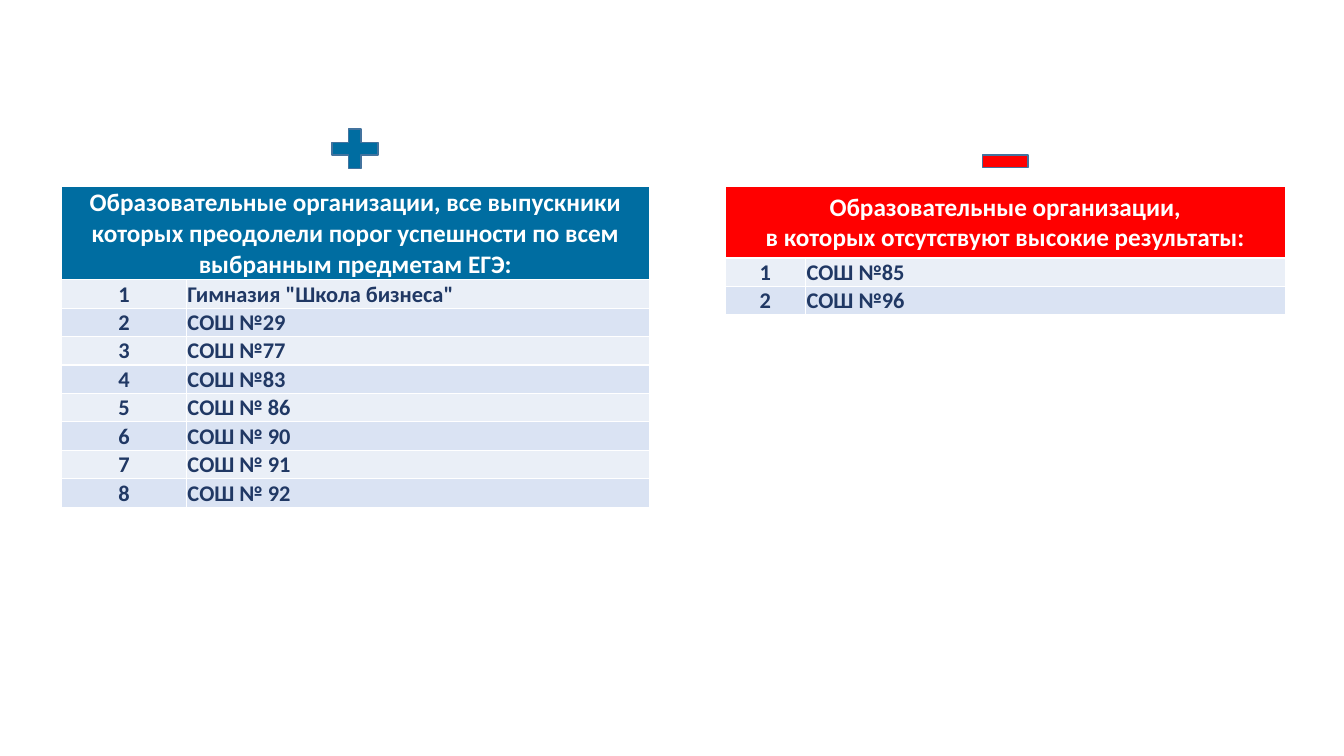
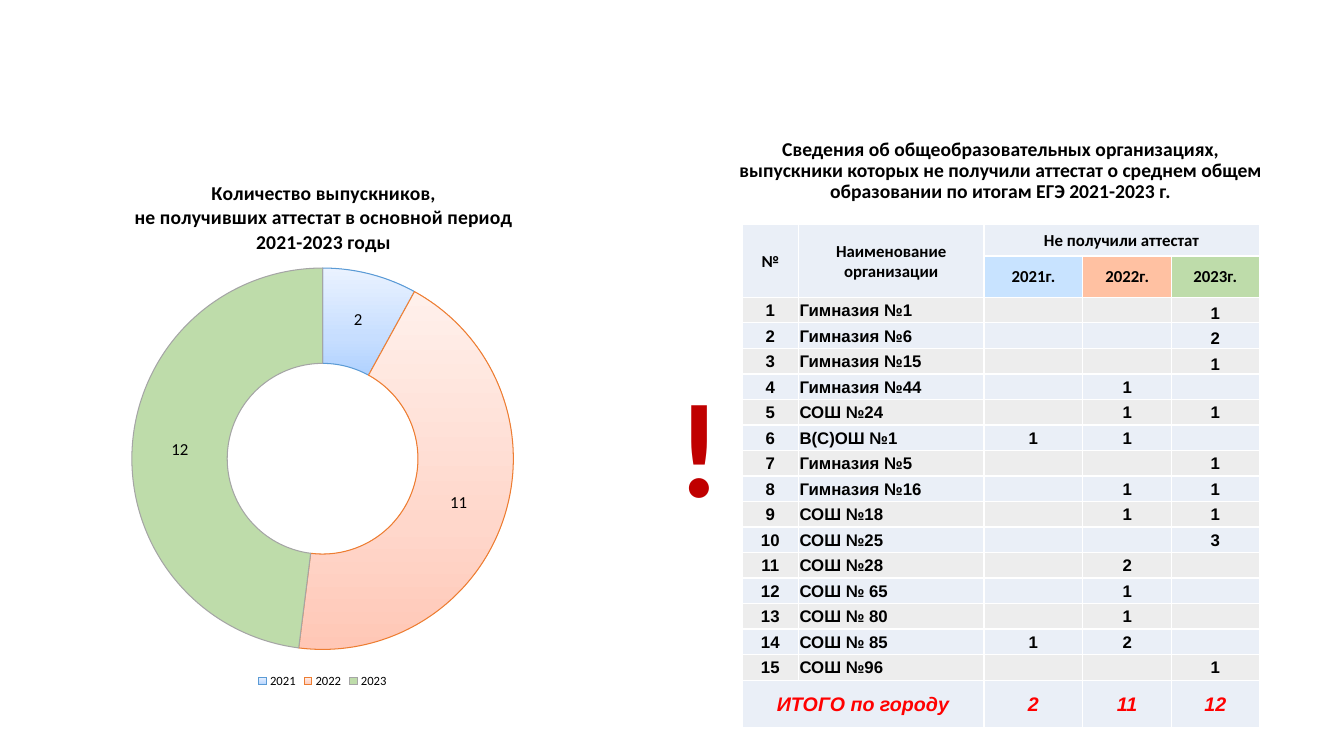
import pptx
import pptx.chart.data
import pptx.dml.color
import pptx.enum.chart
import pptx.enum.shapes
import pptx.enum.text
import pptx.oxml
import pptx.oxml.ns
import pptx.util
from lxml import etree

Inches = pptx.util.Inches
Pt = pptx.util.Pt
RGBColor = pptx.dml.color.RGBColor
qn = pptx.oxml.ns.qn
CENTER = pptx.enum.text.PP_ALIGN.CENTER
LEFT = pptx.enum.text.PP_ALIGN.LEFT
BOTTOM = pptx.enum.text.MSO_ANCHOR.BOTTOM

WHITE = RGBColor(0xFF, 0xFF, 0xFF)
BLACK = RGBColor(0, 0, 0)
RED = RGBColor(0xFF, 0, 0)
DARK_RED = RGBColor(0xC0, 0, 0)
BLUE = RGBColor(0, 0x6D, 0xA1)
NAVY = RGBColor(0x20, 0x38, 0x64)
OUTLINE = RGBColor(0x43, 0x73, 0x9E)
PALE_BLUE = RGBColor(0xEA, 0xEF, 0xF7)
LIGHT_BLUE = RGBColor(0xDA, 0xE3, 0xF3)
PALE_GREY = RGBColor(0xED, 0xED, 0xED)
YEAR_2021 = RGBColor(0xC8, 0xE3, 0xFF)
YEAR_2022 = RGBColor(0xFF, 0xC1, 0xA2)
YEAR_2023 = RGBColor(0xBE, 0xDC, 0xAA)


def write(frame, text, size=12, color=BLACK, font="Calibri", align=CENTER,
          bold=True, italic=False, line_spacing=None):
    """Fill a text frame, one paragraph for each line of the text."""
    for index, line in enumerate(text.split("\n")):
        paragraph = frame.add_paragraph() if index else frame.paragraphs[0]
        paragraph.alignment = align
        if line_spacing:
            paragraph.line_spacing = line_spacing
        if not line:
            etree.SubElement(paragraph._p, qn("a:endParaRPr"), sz=str(size * 100))
            continue
        run = paragraph.add_run()
        run.text = line
        run.font.size = Pt(size)
        run.font.name = font
        run.font.bold = bold
        run.font.italic = italic
        run.font.color.rgb = color


def add_table(slide, left, top, widths, heights, row_colors):
    """Add a table with white cell borders, narrow margins and one fill a row."""
    table = slide.shapes.add_table(
        len(heights), len(widths), Inches(left), Inches(top),
        Inches(sum(widths)), Inches(sum(heights))).table
    for column, width in zip(table.columns, widths):
        column.width = Inches(width)
    for row, height, color in zip(table.rows, heights, row_colors):
        row.height = Inches(height)
        for cell in row.cells:
            cell.margin_left = cell.margin_right = cell.margin_top = Inches(0.01)
            cell.margin_bottom = 0
            cell.vertical_anchor = pptx.enum.text.MSO_ANCHOR.MIDDLE
            properties = cell._tc.get_or_add_tcPr()
            for side in ("a:lnL", "a:lnR", "a:lnT", "a:lnB"):
                border = etree.SubElement(properties, qn(side), w=str(Pt(1)))
                solid = etree.SubElement(border, qn("a:solidFill"))
                etree.SubElement(solid, qn("a:srgbClr"), val=str(WHITE))
            cell.fill.solid()
            cell.fill.fore_color.rgb = color
    return table


presentation = pptx.Presentation()
presentation.slide_width = Inches(13.33)
presentation.slide_height = Inches(7.5)
blank_layout = presentation.slide_layouts[6]

# Slide 1: strong and weak results
slide = presentation.slides.add_slide(blank_layout)
school_lists = [
    (7.19, [0.8, 4.76], 0.71, RED,
     "Образовательные организации,\nв которых отсутствуют высокие результаты:",
     ["СОШ №85", "СОШ №96"]),
    (0.61, [1.24, 4.59], 0.92, BLUE,
     "Образовательные организации, все выпускники которых преодолели порог "
     "успешности по всем выбранным предметам ЕГЭ:",
     ['Гимназия "Школа бизнеса"', "СОШ №29", "СОШ №77", "СОШ №83",
      "СОШ № 86", "СОШ № 90", "СОШ № 91", "СОШ № 92"]),
]
for left, widths, header_height, header_color, header, schools in school_lists:
    stripes = [(PALE_BLUE, LIGHT_BLUE)[index % 2] for index in range(len(schools))]
    table = add_table(slide, left, 1.85, widths,
                      [header_height] + [0.28] * len(schools),
                      [header_color] + stripes)
    table.cell(0, 0).merge(table.cell(0, 1))
    write(table.cell(0, 0).text_frame, header, size=18, color=WHITE)
    for number, school in enumerate(schools, 1):
        write(table.cell(number, 0).text_frame, str(number), size=16, color=NAVY)
        write(table.cell(number, 1).text_frame, school, size=16, color=NAVY, align=LEFT)

for kind, left, top, height, color in [
    (pptx.enum.shapes.MSO_SHAPE.MATH_PLUS, 3.21, 1.21, 0.53, BLUE),
    (pptx.enum.shapes.MSO_SHAPE.MATH_MINUS, 9.66, 1.34, 0.52, RED),
]:
    sign = slide.shapes.add_shape(kind, Inches(left), Inches(top),
                                  Inches(0.62), Inches(height))
    sign.shadow.inherit = False
    sign.fill.solid()
    sign.fill.fore_color.rgb = color
    sign.line.color.rgb = OUTLINE
    sign.line.width = Pt(1)

# Slide 2: graduates without a certificate
slide = presentation.slides.add_slide(blank_layout)
title = slide.shapes.add_textbox(Inches(6.83), Inches(1.29), Inches(6.19), Inches(0.77))
title.text_frame.word_wrap = True
title.text_frame.vertical_anchor = BOTTOM
write(title.text_frame,
      "Сведения об общеобразовательных организациях,\n"
      "выпускники которых не получили аттестат о среднем общем "
      "образовании по итогам ЕГЭ 2021-2023 г.", size=14, line_spacing=0.9)

warning = slide.shapes.add_textbox(Inches(6.62), Inches(3.55), Inches(0.4), Inches(1.72))
warning.text_frame.word_wrap = True
warning.text_frame.auto_size = pptx.enum.text.MSO_AUTO_SIZE.SHAPE_TO_FIT_TEXT
write(warning.text_frame, "!", size=96, color=DARK_RED, align=LEFT)

school_counts = [
    ("Гимназия №1", "", "", "1"),
    ("Гимназия №6", "", "", "2"),
    ("Гимназия №15", "", "", "1"),
    ("Гимназия №44", "", "1", ""),
    ("СОШ №24", "", "1", "1"),
    ("В(С)ОШ №1", "1", "1", ""),
    ("Гимназия №5", "", "", "1"),
    ("Гимназия №16", "", "1", "1"),
    ("СОШ №18", "", "1", "1"),
    ("СОШ №25", "", "", "3"),
    ("СОШ №28", "", "2", ""),
    ("СОШ № 65", "", "1", ""),
    ("СОШ № 80", "", "1", ""),
    ("СОШ № 85", "1", "2", ""),
    ("СОШ №96", "", "", "1"),
]
count = len(school_counts)
total_row = count + 2
stripes = [(PALE_GREY, PALE_BLUE)[index % 2] for index in range(count)]
table = add_table(slide, 7.36, 2.23, [0.56, 1.84, 0.98, 0.88, 0.87],
                  [0.31, 0.41] + [3.8 / count] * count + [0.47],
                  [PALE_BLUE, PALE_BLUE] + stripes + [PALE_BLUE])
for first, last in [((0, 0), (1, 0)), ((0, 1), (1, 1)), ((0, 2), (0, 4)),
                    ((total_row, 0), (total_row, 1))]:
    table.cell(*first).merge(table.cell(*last))
for column, header in enumerate(["№", "Наименование организации", "Не получили аттестат"]):
    write(table.cell(0, column).text_frame, header)
for column, (year, color) in enumerate(
        [("2021г.", YEAR_2021), ("2022г.", YEAR_2022), ("2023г.", YEAR_2023)], 2):
    table.cell(1, column).fill.fore_color.rgb = color
    write(table.cell(1, column).text_frame, year)
for number, values in enumerate(school_counts, 1):
    for column, value in enumerate((str(number), *values)):
        write(table.cell(number + 1, column).text_frame, value, font="Arial",
              align=LEFT if column == 1 else CENTER)
    if number <= 3:
        table.cell(number + 1, 4).vertical_anchor = BOTTOM
for column, value in [(0, "ИТОГО по городу"), (2, "2"), (3, "11"), (4, "12")]:
    write(table.cell(total_row, column).text_frame, value, size=14, color=RED,
          font="Arial", italic=True)

chart_data = pptx.chart.data.CategoryChartData()
chart_data.categories = ["2021", "2022", "2023"]
chart_data.add_series("Series 1", (2, 11, 12))
chart = slide.shapes.add_chart(
    pptx.enum.chart.XL_CHART_TYPE.DOUGHNUT, Inches(0.77), Inches(1.54),
    Inches(4.86), Inches(5.33), chart_data).chart
chart.font.name = "Calibri"
chart.font.size = Pt(10)
chart.font.color.rgb = BLACK
chart.has_title = True
write(chart.chart_title.text_frame,
      "Количество выпускников,\nне получивших аттестат в основной период\n2021-2023 годы",
      size=14)
chart.has_legend = True
chart.legend.position = pptx.enum.chart.XL_LEGEND_POSITION.BOTTOM
chart.legend.include_in_layout = False
chart.legend.font.size = Pt(9)
chart.legend.font.name = "Calibri"
chart.legend.font.color.rgb = BLACK

plot = chart.plots[0]
plot.vary_by_categories = True
plot.has_data_labels = True
labels = plot.data_labels
labels.show_value = True
labels.show_percentage = False
labels.font.size = Pt(12)
labels.font.name = "Calibri"
labels.font.color.rgb = BLACK

point_styles = [
    (("B0D2FF", "C7DEFF", "EAF2FF"), RGBColor(0x5B, 0x9B, 0xD5)),
    (("FFC7B6", "FFD7CB", "FFF0EB"), RGBColor(0xED, 0x7D, 0x31)),
    (None, RGBColor(0xA5, 0xA5, 0xA5)),
]
for index, (gradient, line_color) in enumerate(point_styles):
    point_format = plot.series[0].points[index].format
    point_format.line.color.rgb = line_color
    point_format.line.width = Pt(0.75)
    if gradient is None:
        point_format.fill.solid()
        point_format.fill.fore_color.rgb = YEAR_2023
        continue
    point_format.fill.gradient()
    point_format.fill.gradient_angle = 90
    stop_list = plot.series[0].points[index].format.fill._fill._gradFill.find(qn("a:gsLst"))
    for stop in list(stop_list):
        stop_list.remove(stop)
    for position, color in zip((0, 35, 100), gradient):
        stop = etree.SubElement(stop_list, qn("a:gs"), pos=str(position * 1000))
        etree.SubElement(stop, qn("a:srgbClr"), val=color)

# Fixed places of the chart title and the ring, as shares of the chart
title_element = chart.chart_title._element
plot_area = chart._chartSpace.chart.plotArea
for parent, place, settings in [
    (title_element, 1, {"xMode": "edge", "yMode": "edge", "x": 0.11, "y": 0.04}),
    (plot_area, 0, {"layoutTarget": "inner", "xMode": "edge", "yMode": "edge",
                    "x": 0.11, "y": 0.21, "w": 0.78, "h": 0.71}),
]:
    for old_layout in parent.findall(qn("c:layout")):
        parent.remove(old_layout)
    layout = etree.Element(qn("c:layout"))
    manual = etree.SubElement(layout, qn("c:manualLayout"))
    for name, value in settings.items():
        etree.SubElement(manual, qn("c:" + name), val=str(value))
    parent.insert(place, layout)

presentation.save("out.pptx")
